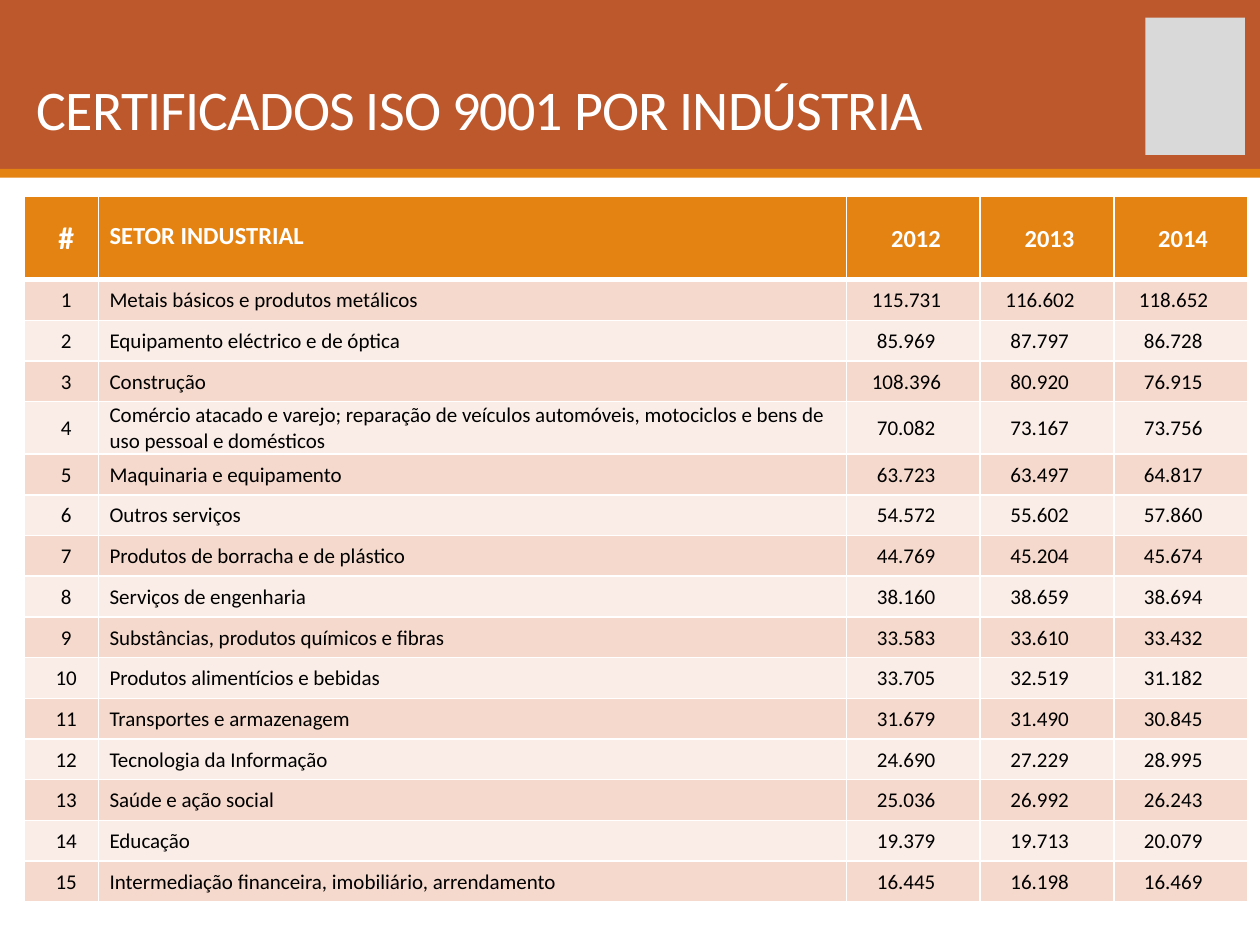
from lxml import etree
from pptx import Presentation
from pptx import util as u
from pptx.dml.color import RGBColor
from pptx.enum import shapes, text
from pptx.oxml import ns

COLORS = {"band": "BD582C", "accent": "E48312", "logo": "D9D9D9", "white": "FFFFFF",
          "black": "000000", "odd": "F5D9CC", "even": "FAEDE7"}
FONT = "Calibri"
UNIT = u.Inches(0.1)  # the slide is a grid of 100 columns by 75 rows

TITLE = "CERTIFICADOS ISO 9001 POR INDÚSTRIA"
HEADER = ["#", "SETOR INDUSTRIAL", "2012", "2013", "2014"]
SECTORS = [
    ("Metais básicos e produtos metálicos", "115.731", "116.602", "118.652"),
    ("Equipamento eléctrico e de óptica", "85.969", "87.797", "86.728"),
    ("Construção", "108.396", "80.920", "76.915"),
    ("Comércio atacado e varejo; reparação de veículos automóveis, motociclos e bens de "
     "uso pessoal e domésticos", "70.082", "73.167", "73.756"),
    ("Maquinaria e equipamento", "63.723", "63.497", "64.817"),
    ("Outros serviços", "54.572", "55.602", "57.860"),
    ("Produtos de borracha e de plástico", "44.769", "45.204", "45.674"),
    ("Serviços de engenharia", "38.160", "38.659", "38.694"),
    ("Substâncias, produtos químicos e fibras", "33.583", "33.610", "33.432"),
    ("Produtos alimentícios e bebidas", "33.705", "32.519", "31.182"),
    ("Transportes e armazenagem", "31.679", "31.490", "30.845"),
    ("Tecnologia da Informação", "24.690", "27.229", "28.995"),
    ("Saúde e ação social", "25.036", "26.992", "26.243"),
    ("Educação", "19.379", "19.713", "20.079"),
    ("Intermediação financeira, imobiliário, arrendamento", "16.445", "16.198", "16.469"),
]
LONG_ROW = 4  # the only sector name on two lines


def grid(*lengths):
    return [u.Emu(round(length * UNIT)) for length in lengths]


def color(name):
    return RGBColor.from_string(COLORS[name])


def format_font(font, size, color_name, bold=False):
    font.name, font.size, font.bold = FONT, u.Pt(size), bold
    font.color.rgb = color(color_name)


def add_block(slide, box, fill):
    block = slide.shapes.add_shape(shapes.MSO_SHAPE.RECTANGLE, *grid(*box))
    block.shadow.inherit = False
    block.fill.solid()
    block.fill.fore_color.rgb = color(fill)
    block.line.fill.background()


def add_title(slide, box):
    title = slide.shapes.title
    title.left, title.top, title.width, title.height = grid(*box)
    title._element.getparent().append(title._element)  # in front of the band
    frame = title.text_frame
    frame.text = TITLE
    frame.word_wrap, frame.auto_size = True, text.MSO_AUTO_SIZE.NONE
    frame.vertical_anchor = text.MSO_ANCHOR.BOTTOM
    frame.margin_left = frame.margin_right = UNIT
    frame.margin_top = frame.margin_bottom = 0
    paragraph = frame.paragraphs[0]
    paragraph.alignment, paragraph.line_spacing = text.PP_ALIGN.LEFT, 0.85
    run = paragraph.runs[0]
    format_font(run.font, 32, "white")
    run.font._element.set("spc", "-50")


def add_header_band(slide, box):
    left, top, width, height = box
    add_block(slide, box, "band")
    add_block(slide, (left, top + height, width, 0.7), "accent")
    add_block(slide, (left + width - 9.1, top + 1.4, 7.9, 10.9), "logo")
    add_title(slide, (left + 1.9, top + 2.5, 85.1, 8.8))


def set_borders(cell, top, bottom):
    properties = cell._tc.get_or_add_tcPr()
    for side, width in (("L", 1), ("R", 1), ("T", top), ("B", bottom)):
        line = etree.SubElement(properties, ns.qn(f"a:ln{side}"), w=str(u.Pt(width)))
        fill = etree.SubElement(line, ns.qn("a:solidFill"))
        etree.SubElement(fill, ns.qn("a:srgbClr"), val=COLORS["white"])


def cell_indent(row, column, value):
    """Indent in grid units; shorter numbers start a little further in."""
    if column < 2:
        return 0.8
    if row == 0:
        return 0.4
    return 1.9 if len(value) == 7 else 2.3


def fill_cell(cell, row, column, value):
    set_borders(cell, 3 if row == 1 else 1, 3 if row == 0 else 1)
    cell.fill.solid()
    cell.fill.fore_color.rgb = color("accent" if row == 0 else "odd" if row % 2 else "even")
    cell.margin_left = cell.margin_right = cell.margin_top = u.Inches(0.01)
    cell.margin_bottom = u.Inches(0.04) if (row, column) == (0, 1) else 0
    cell.vertical_anchor = text.MSO_ANCHOR.MIDDLE
    cell.text = value
    paragraph = cell.text_frame.paragraphs[0]
    centred = column == 0 or (row == 0 and column > 1)
    paragraph.alignment = text.PP_ALIGN.CENTER if centred else text.PP_ALIGN.LEFT
    paragraph._p.get_or_add_pPr().set("marL", str(grid(cell_indent(row, column, value))[0]))
    if row == 0:
        format_font(paragraph.runs[0].font, 18 if column == 0 else 14, "white", True)
    else:
        format_font(paragraph.runs[0].font, 12, "black")


def add_sector_table(slide, box):
    rows = [HEADER] + [(str(number), *sector) for number, sector in enumerate(SECTORS, 1)]
    table = slide.shapes.add_table(len(rows), len(HEADER), *grid(*box)).table

    # Years share one width; sectors share the height left by the two tall rows
    number_width, year_width = 5.9, 10.6
    widths = [number_width, box[2] - number_width - 3 * year_width] + [year_width] * 3
    for column, width in zip(table.columns, grid(*widths)):
        column.width = width
    tall = {0: 6.6, LONG_ROW: 4.1}
    plain = (box[3] - sum(tall.values())) / (len(rows) - len(tall))
    for index, row in enumerate(table.rows):
        row.height = grid(tall.get(index, plain))[0]

    for row, values in enumerate(rows):
        for column, value in enumerate(values):
            fill_cell(table.cell(row, column), row, column, value)


def main():
    presentation = Presentation()
    presentation.slide_width, presentation.slide_height = grid(100, 75)
    slide = presentation.slides.add_slide(presentation.slide_layouts[5])
    add_header_band(slide, (0, 0, 100, 13.4))
    add_sector_table(slide, (1.9, 15.6, 97.1, 55.9))
    presentation.save("out.pptx")


if __name__ == "__main__":
    main()
